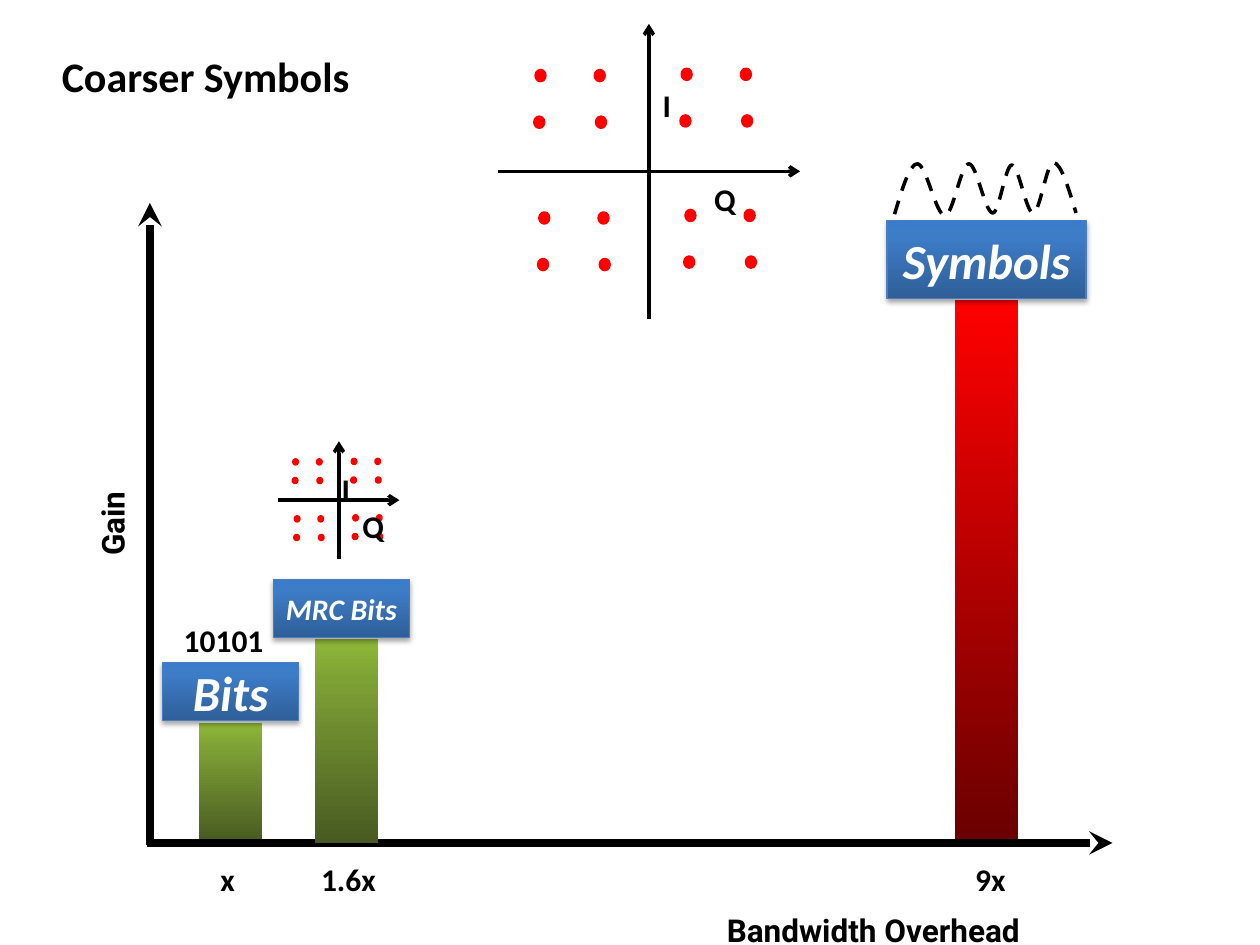
"""Builds the slide that sets gain against bandwidth overhead for bits and symbols."""
from itertools import pairwise

from lxml import etree
from pptx import Presentation
from pptx.dml.color import RGBColor
from pptx.enum.dml import MSO_LINE
from pptx.enum.shapes import MSO_CONNECTOR, MSO_SHAPE
from pptx.enum.text import MSO_ANCHOR, MSO_AUTO_SIZE, PP_ALIGN
from pptx.oxml.ns import qn
from pptx.util import Inches, Pt

RECTANGLE, OVAL = MSO_SHAPE.RECTANGLE, MSO_SHAPE.OVAL
STRAIGHT, DASH = MSO_CONNECTOR.STRAIGHT, MSO_LINE.DASH
LEFT, CENTER = PP_ALIGN.LEFT, PP_ALIGN.CENTER
MIDDLE, TOP = MSO_ANCHOR.MIDDLE, MSO_ANCHOR.TOP
FIT_SHAPE, NO_FIT = MSO_AUTO_SIZE.SHAPE_TO_FIT_TEXT, MSO_AUTO_SIZE.NONE

COLORS = {"ink": "000000", "white": "FFFFFF", "dot": "FF0000", "box_edge": "4B7EBC"}
GRADIENTS = {
    "green": [(0, "485A21"), (80, "7EA135"), (100, "8FB938")],
    "red": [(0, "6A0000"), (100, "FF0000")],
    "blue": [(0, "2F5F99"), (80, "3D7CC7"), (100, "3A7CCB")],
}
QUADRANTS = [(-0.86, -0.76), (0.3, -0.77), (-0.83, 0.37), (0.33, 0.35)]
QUADRANT_DOTS = [(0, 0), (0.47, 0), (-0.01, 0.37), (0.48, 0.37)]
WAVE = [(7.1, 1.7), (7.28, 1.3), (7.5, 1.71), (7.69, 1.3), (7.88, 1.69),
        (8.03, 1.31), (8.2, 1.69), (8.36, 1.29), (8.54, 1.69)]


def rgb(name):
    """Return the named colour."""
    return RGBColor.from_string(COLORS[name])


def write_text(frame, text, size=18, font="Calibri", color="ink", italic=False,
               align=LEFT, anchor=TOP, wrap=False, fit=FIT_SHAPE):
    """Fill a text frame with one bold, formatted line."""
    frame.word_wrap, frame.auto_size, frame.vertical_anchor = wrap, fit, anchor
    line = frame.paragraphs[0]
    line.alignment = align
    run = line.add_run()
    run.text = text
    run.font.size, run.font.name = Pt(size), font
    run.font.bold, run.font.italic = True, italic
    run.font.color.rgb = rgb(color)


class SlidePainter:
    """Holds the current slide and draws its elements in one style."""

    def __init__(self, slide):
        """Start drawing on a slide."""
        self.slide = slide
        self.shapes = slide.shapes

    def title(self, text, x, y, w, h):
        """Place the slide title."""
        heading = self.shapes.title
        heading.left, heading.top, heading.width, heading.height = map(Inches, (x, y, w, h))
        write_text(heading.text_frame, text, size=24, fit=NO_FIT, anchor=MIDDLE)

    def label(self, text, x, y, w, h, rotation=0, shapes=None, **style):
        """Add a text box."""
        box = (shapes or self.shapes).add_textbox(*map(Inches, (x, y, w, h)))
        box.rotation = rotation
        write_text(box.text_frame, text, **style)

    def bar(self, x, y, w, h, gradient):
        """Add a borderless rectangle shaded from bottom to top."""
        block = self.shapes.add_shape(RECTANGLE, *map(Inches, (x, y, w, h)))
        block.shadow.inherit = False
        block.line.fill.background()
        block.fill.gradient()
        block.fill.gradient_angle = 90
        stops = block._element.spPr.find(".//" + qn("a:gsLst"))
        for stop in list(stops):
            stops.remove(stop)
        for position, shade in GRADIENTS[gradient]:
            stop = etree.SubElement(stops, qn("a:gs"), pos=str(position * 1000))
            etree.SubElement(stop, qn("a:srgbClr"), val=shade)
        return block

    def caption_box(self, text, x, y, w, h, size=28):
        """Add a blue box with a soft shadow and an italic caption."""
        box = self.bar(x, y, w, h, "blue")
        box.line.color.rgb, box.line.width = rgb("box_edge"), Pt(0.75)
        effects = box._element.spPr.find(qn("a:effectLst"))
        shadow = etree.SubElement(effects, qn("a:outerShdw"), blurRad=str(Pt(3.1)),
                                  dist=str(Pt(1.8)), dir="5400000", rotWithShape="0")
        tint = etree.SubElement(shadow, qn("a:srgbClr"), val=COLORS["ink"])
        etree.SubElement(tint, qn("a:alpha"), val="35000")
        write_text(box.text_frame, text, size=size, color="white", italic=True,
                   align=CENTER, anchor=MIDDLE, fit=NO_FIT)

    def arrow(self, start, end, width, head, shapes=None):
        """Add a straight arrow that points at its end."""
        axis = (shapes or self.shapes).add_connector(STRAIGHT, *map(Inches, (*start, *end)))
        axis.line.color.rgb, axis.line.width = rgb("ink"), Pt(width)
        etree.SubElement(axis.line._ln, qn("a:tailEnd"), type=head)
        etree.SubElement(axis._element.spPr, qn("a:effectLst"))

    def dot(self, x, y, w, h, shapes):
        """Add a red dot centred on a point."""
        point = shapes.add_shape(OVAL, *map(Inches, (x - w / 2, y - h / 2, w, h)))
        point.shadow.inherit = False
        point.fill.solid()
        point.fill.fore_color.rgb = point.line.color.rgb = rgb("dot")
        point.line.width = Pt(2)

    def constellation(self, x, y, scale=1.0):
        """Add a grouped 16-point I/Q diagram around its origin."""
        group = self.shapes.add_group_shape().shapes
        reach, rise = 1.2 * scale, 1.17 * scale
        self.arrow((x - reach, y), (x + reach, y), 2, "arrow", group)
        self.arrow((x, y + rise), (x, y - rise), 2, "arrow", group)
        for quadrant_x, quadrant_y in QUADRANTS:
            for dx, dy in QUADRANT_DOTS:
                self.dot(x + (quadrant_x + dx) * scale, y + (quadrant_y + dy) * scale,
                         0.07 * scale, 0.08 * scale, group)
        for letter, dx, dy in (("I", 0.01, -0.73), ("Q", 0.42, 0.02)):
            self.label(letter, x + dx * scale, y + dy * scale, 0.29 * scale, 0.28 * scale,
                       shapes=group, wrap=True)

    def wave(self, turns):
        """Add a dashed smooth curve that is level at its inner turning points."""
        points = []
        for (x0, y0), (x1, y1) in pairwise(turns):
            middle, third = (y0 + y1) / 2, (x1 - x0) / 3
            points += [(x0 + third, middle if (x0, y0) == turns[0] else y0),
                       (x1 - third, middle if (x1, y1) == turns[-1] else y1), (x1, y1)]
        builder = self.shapes.build_freeform(*map(Inches, turns[0]))
        builder.add_line_segments([tuple(map(Inches, p)) for p in points], close=False)
        curve = builder.convert_to_shape()
        outline = curve._element.spPr.find(".//" + qn("a:path"))
        segments = outline.findall(qn("a:lnTo"))
        for first in range(0, len(segments), 3):
            bend = etree.SubElement(outline, qn("a:cubicBezTo"))
            for segment in segments[first:first + 3]:
                bend.append(segment[0])
                outline.remove(segment)
        curve.shadow.inherit = False
        curve.fill.background()
        curve.line.color.rgb, curve.line.width = rgb("ink"), Pt(2)
        curve.line.dash_style = DASH


def main():
    """Build and save the slide."""
    deck = Presentation()
    deck.slide_width, deck.slide_height = Inches(10), Inches(7.5)
    painter = SlidePainter(deck.slides.add_slide(deck.slide_layouts[5]))

    painter.title("Coarser Symbols", 0.39, 0.35, 2.51, 0.5)
    painter.bar(1.58, 5.74, 0.5, 0.95, "green")
    painter.bar(7.58, 2.38, 0.5, 4.29, "red")
    painter.arrow((1.17, 6.69), (8.83, 6.69), 4.5, "stealth")
    painter.arrow((1.19, 6.71), (1.19, 1.61), 4.5, "stealth")
    painter.caption_box("Bits", 1.29, 5.26, 1.08, 0.46)
    painter.caption_box("Symbols", 7.04, 1.75, 1.58, 0.62)
    painter.label("Gain", 0.52, 3.94, 0.74, 0.4, rotation=270, font="Roboto")
    painter.label("Bandwidth Overhead", 5.67, 7.18, 2.7, 0.4, font="Roboto")
    painter.bar(2.5, 5.07, 0.5, 1.62, "green")
    painter.caption_box("MRC Bits", 2.17, 4.6, 1.08, 0.46, size=17)
    painter.constellation(5.15, 1.36)
    painter.constellation(2.69, 3.97, scale=0.4)
    for overhead, x, width in (("x", 1.65, 0.32), ("9x", 7.64, 0.45), ("1.6x", 2.45, 0.64)):
        painter.label(overhead, x, 6.78, width, 0.4)
    painter.label("10101", 1.36, 4.88, 0.84, 0.4)
    painter.wave(WAVE)

    deck.save("out.pptx")


if __name__ == "__main__":
    main()
